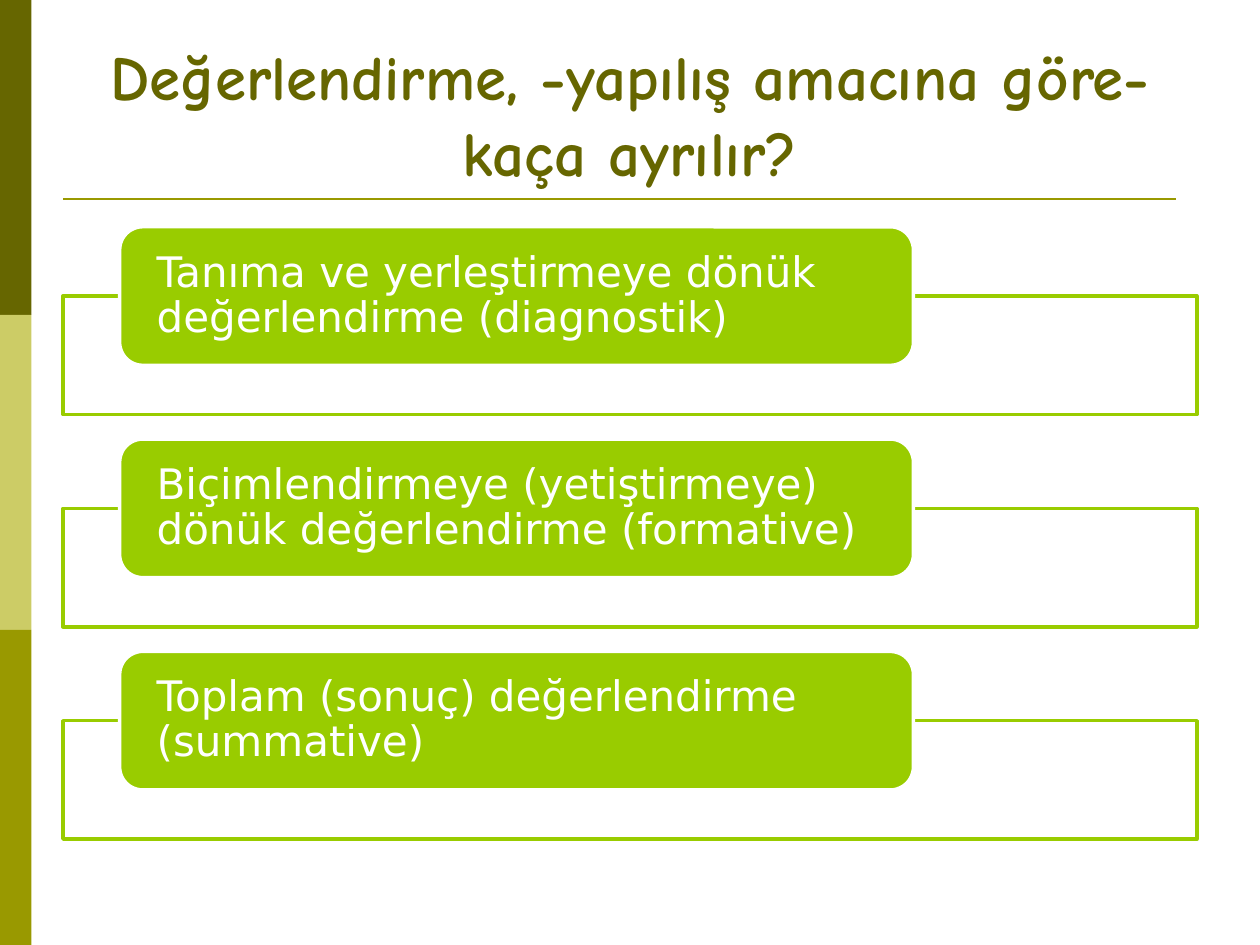
"""Build a slide listing the three kinds of assessment by purpose."""
from lxml import etree
from pptx import Presentation
from pptx import util as u
from pptx.dml.color import RGBColor
from pptx.enum import shapes, text
from pptx.oxml.ns import qn

TITLE = "Değerlendirme, -yapılış amacına göre- kaça ayrılır?"
KINDS = [
    "Tanıma ve yerleştirmeye dönük değerlendirme (diagnostik)",
    "Biçimlendirmeye (yetiştirmeye) dönük değerlendirme (formative)",
    "Toplam (sonuç) değerlendirme (summative)",
]
THEME = {
    "dark": "666600", "pale": "CCCC66", "olive": "999900",
    "green": "99CC00", "white": "FFFFFF",
    "title_font": "Comic Neue", "body_font": "DejaVu Sans",
    "title_size": 36, "body_size": 24, "rule": 1.5, "outline": 2,
}
BANDS = ["dark", "pale", "olive"]
FIRST_TOP, LAST_TOP, LABEL_RISE = 2.35, 5.72, 0.55


def color(name):
    return RGBColor.from_string(THEME[name])


def add_box(s, kind, box, fill, line=None):
    sp = s.shapes.add_shape(kind, *map(u.Inches, box))
    sp.shadow.inherit = False
    sp.fill.solid()
    sp.fill.fore_color.rgb = color(fill)
    if line:
        sp.line.color.rgb = color(line)
        sp.line.width = u.Pt(THEME["outline"])
    else:
        sp.line.fill.background()
    return sp


def write(sp, words, *, style, fill, align, anchor, insets, bold=False, spacing=None):
    tf = sp.text_frame
    tf.word_wrap = True
    tf.auto_size = text.MSO_AUTO_SIZE.NONE
    tf.vertical_anchor = anchor
    tf.margin_left, tf.margin_top, tf.margin_right, tf.margin_bottom = map(u.Inches, insets)
    p = tf.paragraphs[0]
    p.alignment = align
    if spacing:
        p.line_spacing = spacing
    r = p.add_run()
    r.text = words
    r.font.name = THEME[style + "_font"]
    r.font.size = u.Pt(THEME[style + "_size"])
    r.font.bold = bold
    r.font.color.rgb = color(fill)


def add_rule(s, left, right, y):
    line = s.shapes.add_connector(
        shapes.MSO_CONNECTOR.STRAIGHT, *map(u.Inches, (left, y, right, y)))
    line.line.color.rgb = color("olive")
    line.line.width = u.Pt(THEME["rule"])
    etree.SubElement(line._element.spPr, qn("a:effectLst"))


def add_kind(s, top, words):
    rect, rounded = shapes.MSO_SHAPE.RECTANGLE, shapes.MSO_SHAPE.ROUNDED_RECTANGLE
    add_box(s, rect, (0.5, top, 9, 0.94), "white", "green")
    label = add_box(s, rounded, (0.95, top - LABEL_RISE, 6.3, 1.1), "green", "white")
    write(label, words, style="body", fill="white", align=text.PP_ALIGN.LEFT,
          anchor=text.MSO_ANCHOR.MIDDLE, insets=(0.24, 0, 0.24, 0), spacing=0.9)


def main():
    prs = Presentation()
    prs.slide_width, prs.slide_height = u.Inches(10), u.Inches(7.5)
    s = prs.slides.add_slide(prs.slide_layouts[5])

    title = s.shapes.title
    title.left, title.top, title.width, title.height = map(u.Inches, (0.5, 0.3, 9, 1.25))
    write(title, TITLE, style="title", fill="dark", align=text.PP_ALIGN.CENTER,
          anchor=text.MSO_ANCHOR.BOTTOM, insets=(0.1, 0.05, 0.1, 0.05), bold=True)

    band_height = 7.5 / len(BANDS)
    for i, band in enumerate(BANDS):
        add_box(s, shapes.MSO_SHAPE.RECTANGLE, (0, i * band_height, 0.25, band_height), band)
    add_rule(s, 0.5, 9.33, 1.58)

    pitch = (LAST_TOP - FIRST_TOP) / (len(KINDS) - 1)
    for i, words in enumerate(KINDS):
        add_kind(s, FIRST_TOP + i * pitch, words)

    prs.save("out.pptx")


if __name__ == "__main__":
    main()
